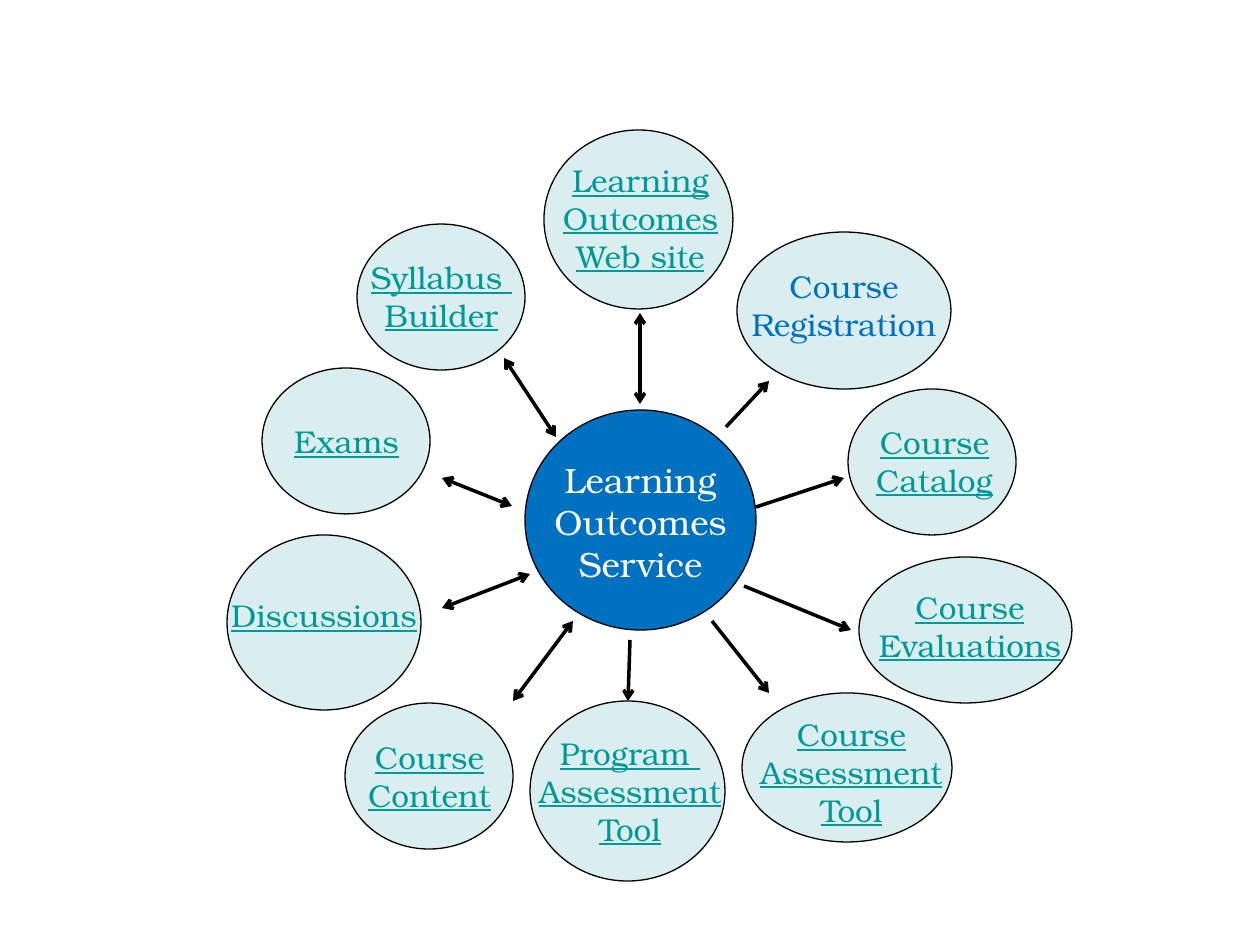
from typing import NamedTuple

from lxml.etree import SubElement
from pptx import Presentation
from pptx.dml.color import RGBColor
from pptx.enum.shapes import MSO_CONNECTOR as Conn, MSO_SHAPE as Shape
from pptx.enum.text import PP_ALIGN as Align
from pptx.oxml.ns import qn
from pptx.util import Emu, Pt

FONT = "TeX Gyre Bonum"
BLUE = RGBColor(0x00, 0x70, 0xC0)
PALE = RGBColor(0xDA, 0xED, 0xEF)
TEAL = RGBColor(0x00, 0x99, 0x99)
BLACK = RGBColor(0x00, 0x00, 0x00)
WHITE = RGBColor(0xFF, 0xFF, 0xFF)

Box = tuple[int, int, int, int]


class Bubble(NamedTuple):
    lines: list[str]
    oval: Box
    label: Box
    fill: RGBColor = PALE
    color: RGBColor = TEAL
    size: int = 18
    underline: bool = True


class Arrow(NamedTuple):
    start: tuple[int, int]
    end: tuple[int, int]
    double: bool = False


BUBBLES = [
    Bubble(["Learning Outcomes Service"], (525, 410, 231, 220),
           (525, 452, 231, 140), BLUE, WHITE, 20, False),
    Bubble(["Learning Outcomes Web site"], (544, 130, 189, 179), (546, 155, 189, 127)),
    Bubble(["Exams"], (262, 368, 168, 146), (252, 416, 189, 50)),
    Bubble(["Syllabus ", "Builder"], (357, 224, 168, 146), (347, 252, 189, 89)),
    Bubble(["Discussions"], (227, 535, 194, 175), (215, 590, 218, 50)),
    Bubble(["Course", "Content"], (345, 703, 168, 146), (335, 732, 189, 89)),
    Bubble(["Program ", "Assessment", "Tool"], (530, 701, 195, 180), (525, 728, 210, 127)),
    Bubble(["Course", "Registration"], (737, 232, 214, 157), (711, 261, 266, 137),
           color=BLUE, underline=False),
    Bubble(["Course", "Catalog"], (848, 389, 168, 146), (840, 417, 189, 89)),
    Bubble(["Course Assessment Tool"], (742, 693, 210, 149), (733, 709, 237, 127)),
    Bubble(["Course", "Evaluations"], (859, 557, 213, 146), (859, 582, 222, 89)),
]

ARROWS = [
    Arrow((756, 507), (844, 478)),
    Arrow((726, 427), (769, 381)),
    Arrow((744, 586), (851, 630)),
    Arrow((712, 621), (769, 693)),
    Arrow((630, 640), (628, 701)),
    Arrow((640, 404), (640, 313), True),
    Arrow((556, 437), (504, 358), True),
    Arrow((512, 506), (442, 478), True),
    Arrow((530, 574), (442, 608), True),
    Arrow((573, 621), (513, 701), True),
]


def px(n: int) -> Emu:
    return Emu(round(n * 914400 / 126))


def draw_bubble(shapes, bubble: Bubble) -> None:
    sp = shapes.add_shape(Shape.OVAL, *map(px, bubble.oval))
    sp.shadow.inherit = False
    sp.fill.solid()
    sp.fill.fore_color.rgb = bubble.fill
    sp.line.color.rgb = BLACK
    sp.line.width = Pt(0.75)

    tf = shapes.add_textbox(*map(px, bubble.label)).text_frame
    tf.word_wrap = True
    tf.text = "\n".join(bubble.lines)
    for p in tf.paragraphs:
        p.alignment = Align.CENTER
        p.font.name = FONT
        p.font.size = Pt(bubble.size)
        p.font.color.rgb = bubble.color
        p.font.underline = bubble.underline


def draw_arrow(shapes, arrow: Arrow) -> None:
    cxn = shapes.add_connector(Conn.STRAIGHT, *map(px, arrow.start + arrow.end))
    cxn.line.color.rgb = BLACK
    cxn.line.width = Pt(2)
    ln = cxn.line._get_or_add_ln()
    for tag in ("a:headEnd", "a:tailEnd") if arrow.double else ("a:tailEnd",):
        SubElement(ln, qn(tag), type="arrow")
    SubElement(cxn._element.spPr, qn("a:effectLst"))


def main() -> None:
    prs = Presentation()
    prs.slide_width, prs.slide_height = px(1260), px(945)
    shapes = prs.slides.add_slide(prs.slide_layouts[6]).shapes
    for bubble in BUBBLES:
        draw_bubble(shapes, bubble)
    for arrow in ARROWS:
        draw_arrow(shapes, arrow)
    prs.save("out.pptx")


if __name__ == "__main__":
    main()
